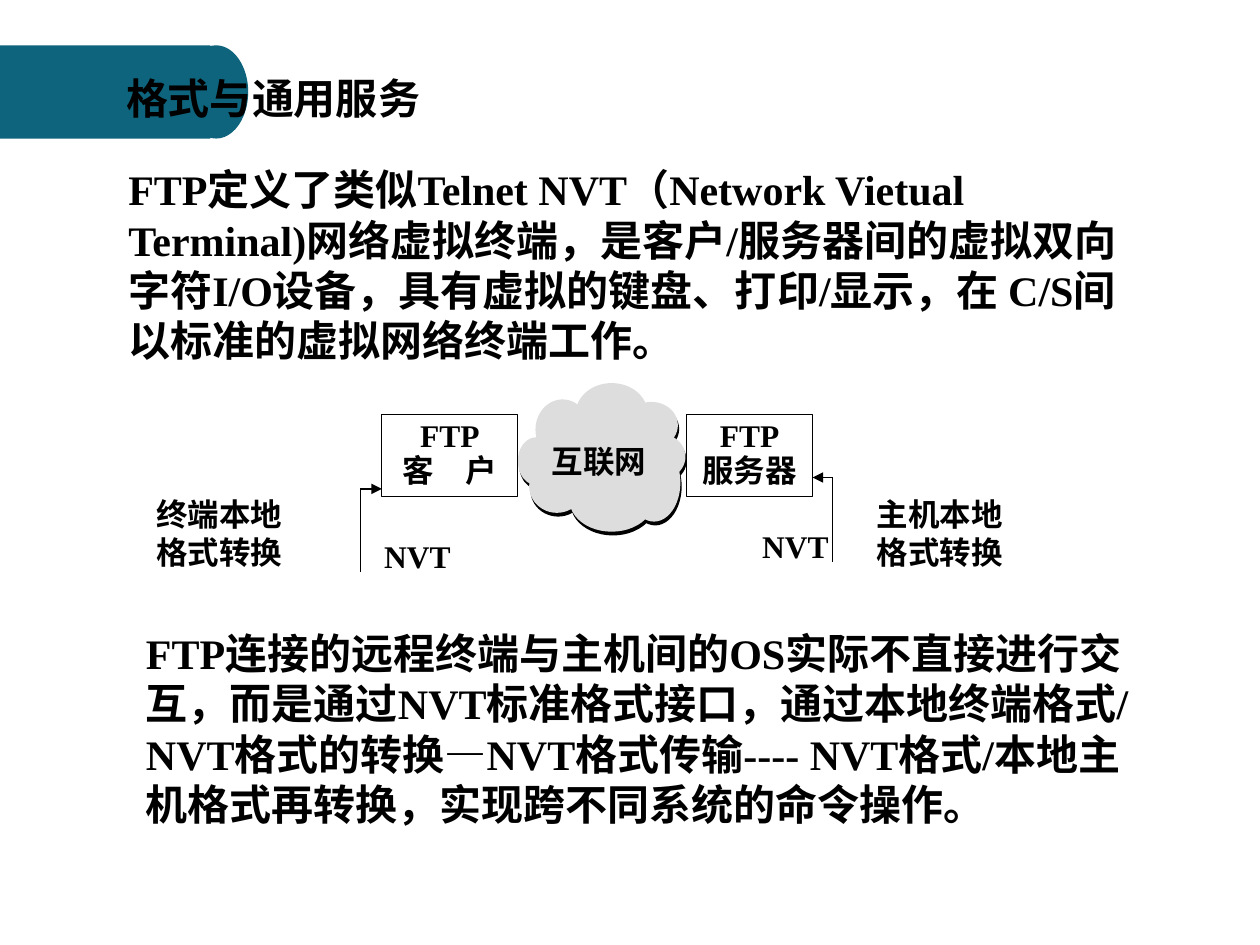
import pptx
import pptx.dml.color
import pptx.enum.shapes
import pptx.enum.text
import pptx.oxml.ns
import pptx.util
from lxml import etree

PX = pptx.util.Inches(1) // 100
FONT = "Times New Roman"
TEAL = pptx.dml.color.RGBColor(0x0E, 0x64, 0x7C)
BLACK = pptx.dml.color.RGBColor(0, 0, 0)
GREY = pptx.dml.color.RGBColor(0xDD, 0xDD, 0xDD)
SHAPE = pptx.enum.shapes.MSO_SHAPE
ANCHOR = pptx.enum.text.MSO_ANCHOR
ALIGN = pptx.enum.text.PP_ALIGN

INTRODUCTION = (
    "FTP定义了类似Telnet NVT（Network Vietual Terminal)网络虚拟终端，"
    "是客户/服务器间的虚拟双向字符I/O设备，具有虚拟的键盘、打印/显示，"
    "在 C/S间以标准的虚拟网络终端工作。"
)
CONCLUSION = (
    "FTP连接的远程终端与主机间的OS实际不直接进行交互，"
    "而是通过NVT标准格式接口，通过本地终端格式/ NVT格式的转换—"
    "NVT格式传输---- NVT格式/本地主机格式再转换，实现跨不同系统的命令操作。"
)
CLOUD_PUFFS = [
    (457, 304, 57, 48),
    (425, 317, 43, 48),
    (411, 347, 29, 38),
    (420, 365, 44, 42),
    (452, 372, 67, 50),
    (496, 319, 42, 37),
    (502, 344, 42, 37),
    (498, 352, 42, 62),
    (436, 333, 86, 62),
]
LABELS = [
    ("NVT", 295, 421, 75, 40),
    ("NVT", 595, 413, 75, 40),
    ("终端本地格式转换", 114, 388, 139, 70),
    ("主机本地格式转换", 686, 388, 136, 70),
]


def scaled(*lengths):
    return [length * PX for length in lengths]


def format_text(text_frame, size, align=ALIGN.LEFT, line_spacing=1.0):
    for paragraph in text_frame.paragraphs:
        paragraph.alignment = align
        paragraph.line_spacing = line_spacing
        for run in paragraph.runs:
            run.font.name = FONT
            run.font.size = pptx.util.Pt(size)
            run.font.bold = True
            run.font.color.rgb = BLACK


def add_filled(slide, kind, box, color):
    shape = slide.shapes.add_shape(kind, *scaled(*box))
    shape.shadow.inherit = False
    shape.fill.solid()
    shape.fill.fore_color.rgb = color
    shape.line.fill.background()


def add_text(slide, text, box, size, wrap=True):
    text_frame = slide.shapes.add_textbox(*scaled(*box)).text_frame
    text_frame.word_wrap = wrap
    text_frame.text = text
    format_text(text_frame, size)


def add_node(slide, text, box):
    shape = slide.shapes.add_shape(SHAPE.RECTANGLE, *scaled(*box))
    shape.shadow.inherit = False
    shape.fill.background()
    shape.line.color.rgb = BLACK
    shape.line.width = pptx.util.Pt(0.75)
    text_frame = shape.text_frame
    text_frame.vertical_anchor = ANCHOR.TOP
    text_frame.text = text
    format_text(text_frame, 18, ALIGN.CENTER, 0.9)


def add_line(slide, start, end, arrow=False):
    connector = slide.shapes.add_connector(
        pptx.enum.shapes.MSO_CONNECTOR.STRAIGHT, *scaled(*start, *end)
    )
    connector.line.color.rgb = BLACK
    connector.line.width = pptx.util.Pt(0.75)
    if arrow:
        line = connector.line._get_or_add_ln()
        etree.SubElement(line, pptx.oxml.ns.qn("a:tailEnd"), type="triangle")
    properties = connector.element.spPr
    etree.SubElement(properties, pptx.oxml.ns.qn("a:effectLst"))


def add_title(slide, text):
    add_filled(slide, SHAPE.RECTANGLE, (0, 36, 167, 74), TEAL)
    add_filled(slide, SHAPE.OVAL, (146, 36, 51, 74), TEAL)
    title = slide.shapes.title
    title.element.getparent().append(title.element)
    title.left, title.top, title.width, title.height = scaled(90, 44, 267, 67)
    text_frame = title.text_frame
    text_frame.text = text
    text_frame.vertical_anchor = ANCHOR.MIDDLE
    text_frame.auto_size = pptx.enum.text.MSO_AUTO_SIZE.NONE
    format_text(text_frame, 24)


def add_cloud(slide):
    for color, offset_x, offset_y in [(BLACK, 1, 3), (GREY, 0, 0)]:
        for left, top, width, height in CLOUD_PUFFS:
            box = (left + offset_x, top + offset_y, width, height)
            add_filled(slide, SHAPE.OVAL, box, color)
    add_text(slide, "互联网", (428, 346, 95, 40), 18, wrap=False)


def add_interface(slide, line_x, box_edge, top, bottom):
    add_line(slide, (line_x, top), (line_x, bottom))
    add_line(slide, (line_x, top), (box_edge, top), arrow=True)


def main():
    presentation = pptx.Presentation()
    presentation.slide_width, presentation.slide_height = scaled(1000, 750)
    slide = presentation.slides.add_slide(presentation.slide_layouts[5])
    add_title(slide, "格式与通用服务")
    add_text(slide, INTRODUCTION, (92, 125, 808, 170), 24)
    add_cloud(slide)
    add_node(slide, "FTP\n服务器", (545, 329, 100, 65))
    add_node(slide, "FTP\n客　户", (303, 329, 108, 65))
    add_interface(slide, 286, 303, 388, 454)
    add_interface(slide, 661, 645, 379, 446)
    for text, *box in LABELS:
        add_text(slide, text, box, 18)
    add_text(slide, CONCLUSION, (106, 493, 808, 170), 24)
    presentation.save("out.pptx")


if __name__ == "__main__":
    main()
